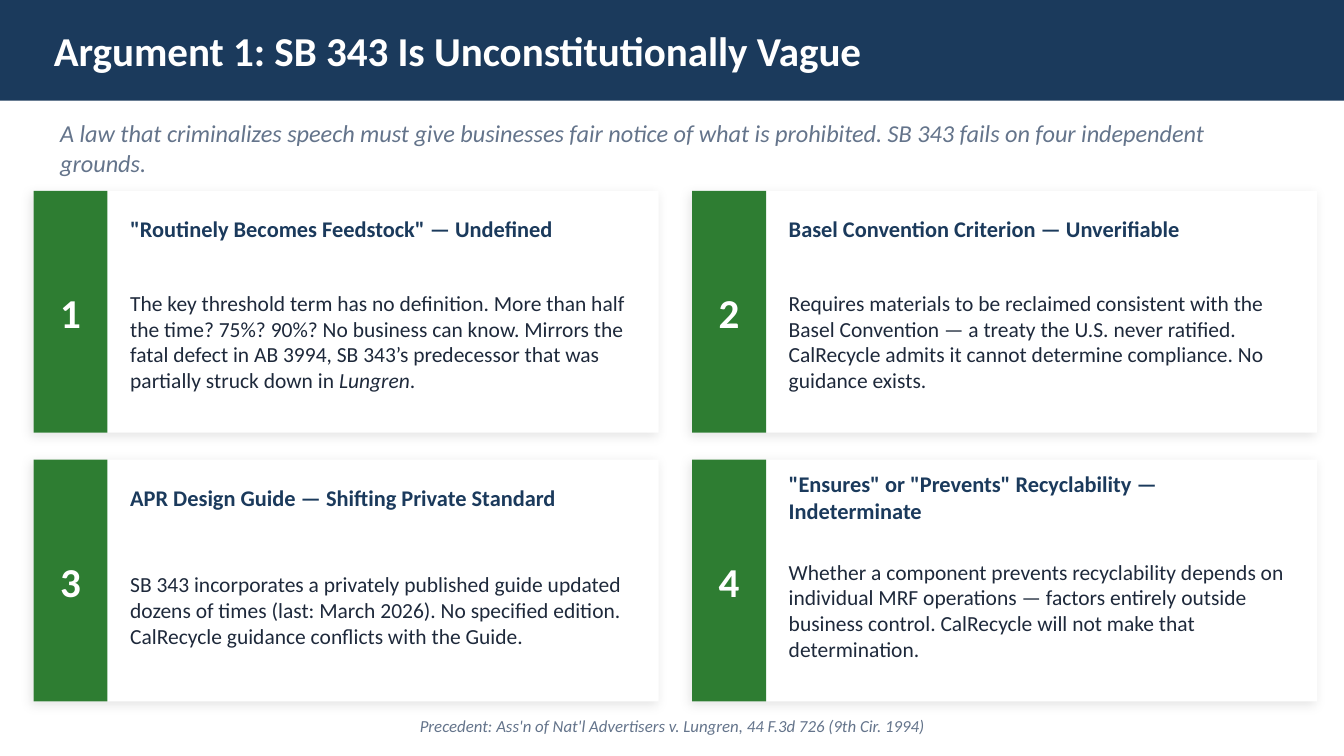
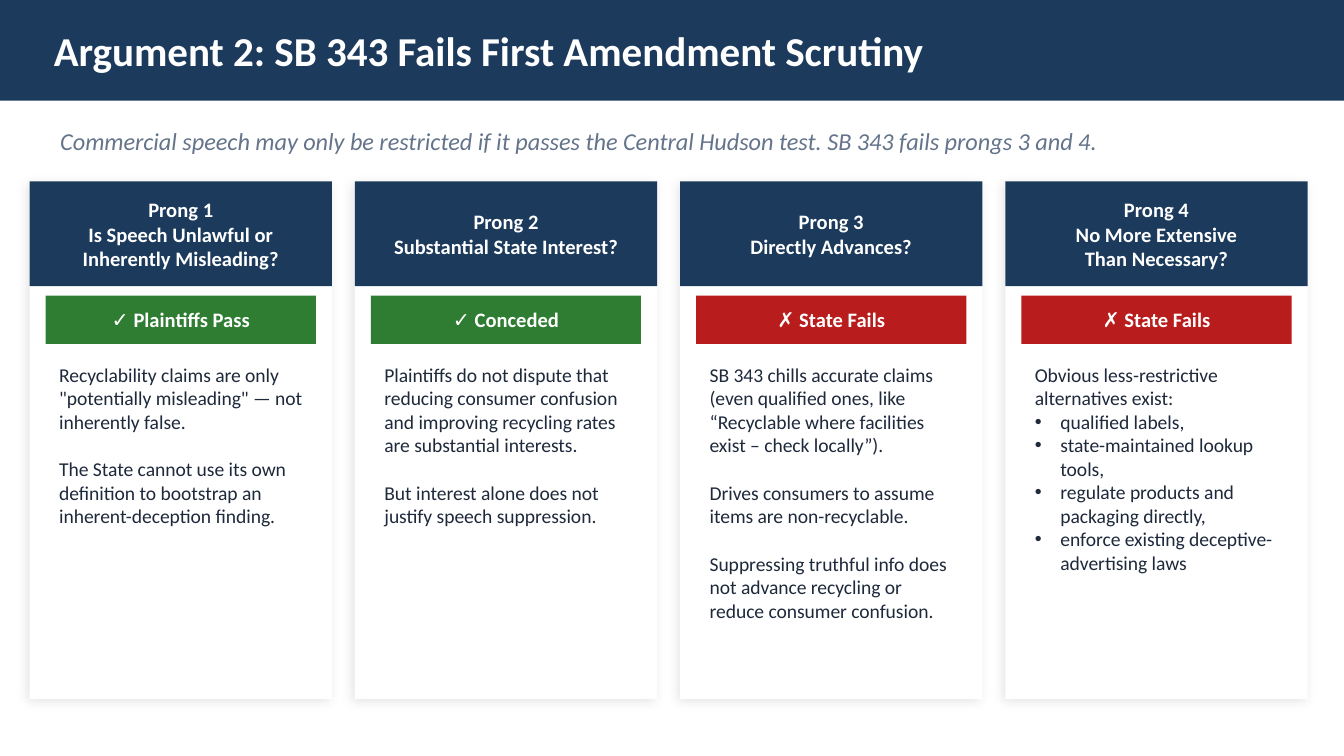
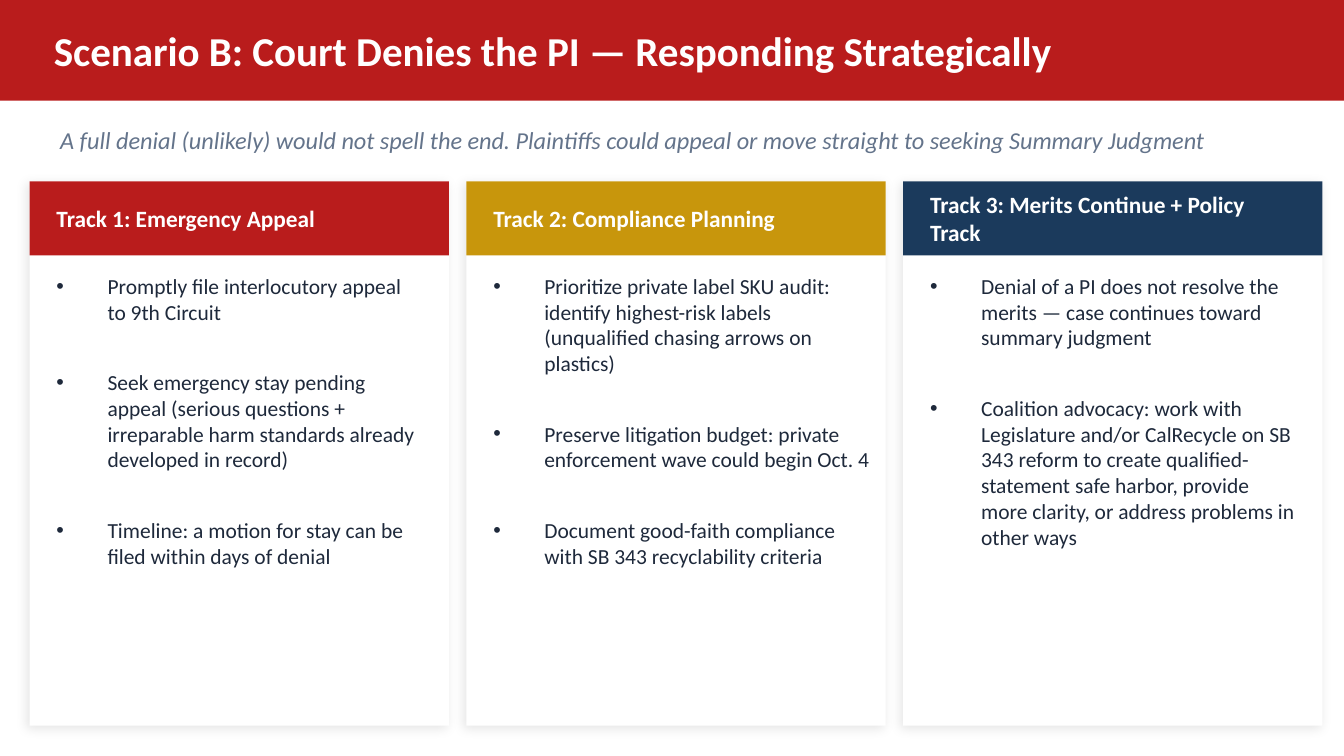
from lxml import etree
from pptx import Presentation
from pptx import util as u
from pptx.dml.color import RGBColor
from pptx.enum import shapes, text
from pptx.oxml.ns import qn

PX = 9144
WIDTH = 1000
FONT = "Calibri"
TITLE_ONLY, COMPARISON = 5, 4

NAVY = RGBColor(0x1B, 0x3A, 0x5C)
GREEN = RGBColor(0x2E, 0x7D, 0x32)
RED = RGBColor(0xB9, 0x1C, 0x1C)
GOLD = RGBColor(0xC8, 0x96, 0x0C)
SLATE = RGBColor(0x64, 0x74, 0x8B)
INK = RGBColor(0x1E, 0x29, 0x3B)
WHITE = RGBColor(0xFF, 0xFF, 0xFF)


def style(size, color, bold=False, italic=False):
    """Return a colour with the font values that go with it."""
    return color, {"name": FONT, "size": u.Pt(size), "bold": bold, "italic": italic}


TITLE = style(22, WHITE, bold=True)
LEAD = style(13, SLATE, italic=True)
NOTE = style(9, SLATE, italic=True)
CARD_HEAD = style(12, NAVY, bold=True)
CARD_TEXT = style(11.5, INK)
PRONG_HEAD = style(11, WHITE, bold=True)
PRONG_TEXT = style(10.5, INK)
TRACK_HEAD = style(12.5, WHITE, bold=True)

LEFT, CENTER = text.PP_ALIGN.LEFT, text.PP_ALIGN.CENTER
TOP, MIDDLE = text.MSO_ANCHOR.TOP, text.MSO_ANCHOR.MIDDLE

GROUNDS = [
    ('"Routinely Becomes Feedstock" — Undefined',
     "The key threshold term has no definition. More than half the time? 75%? 90%? "
     "No business can know. Mirrors the fatal defect in AB 3994, SB 343’s predecessor "
     "that was partially struck down in *Lungren*."),
    ("Basel Convention Criterion — Unverifiable",
     "Requires materials to be reclaimed consistent with the Basel Convention — a treaty "
     "the U.S. never ratified. CalRecycle admits it cannot determine compliance. "
     "No guidance exists."),
    ("APR Design Guide — Shifting Private Standard",
     "SB 343 incorporates a privately published guide updated dozens of times "
     "(last: March 2026). No specified edition. CalRecycle guidance conflicts with the Guide."),
    ('"Ensures" or "Prevents" Recyclability — Indeterminate',
     "Whether a component prevents recyclability depends on individual MRF operations — "
     "factors entirely outside business control. CalRecycle will not make that determination."),
]

PRONGS = [
    (["Prong 1", "Is Speech Unlawful or Inherently Misleading?"], "✓ Plaintiffs Pass", GREEN,
     ['Recyclability claims are only "potentially misleading" — not inherently false.',
      "The State cannot use its own definition to bootstrap an inherent-deception finding."],
     {"gap": 12.8}),
    (["Prong 2", "Substantial State Interest?"], "✓ Conceded", GREEN,
     ["Plaintiffs do not dispute that reducing consumer confusion and improving recycling "
      "rates are substantial interests.",
      "But interest alone does not justify speech suppression."],
     {"gap": 12.8}),
    (["Prong 3", "Directly Advances?"], "✗ State Fails", RED,
     ["SB 343 chills accurate claims (even qualified ones, like “Recyclable where facilities "
      "exist – check locally”).",
      "Drives consumers to assume items are non-recyclable.",
      "Suppressing truthful info does not advance recycling or reduce consumer confusion."],
     {"gap": 12.8}),
    (["Prong 4", "No More Extensive", "Than Necessary?"], "✗ State Fails", RED,
     ["Obvious less-restrictive alternatives exist:",
      "qualified labels,",
      "state-maintained lookup tools,",
      "regulate products and packaging directly,",
      "enforce existing deceptive-advertising laws"],
     {"hang": 19, "first_bullet": 1}),
]

TRACKS = [
    ("Track 1: Emergency Appeal", RED, 292,
     ["Promptly file interlocutory appeal to 9th Circuit",
      "Seek emergency stay pending appeal (serious questions + irreparable harm standards "
      "already developed in record)",
      "Timeline: a motion for stay can be filed within days of denial"]),
    ("Track 2: Compliance Planning", GOLD, 302,
     ["Prioritize private label SKU audit: identify highest-risk labels (unqualified chasing "
      "arrows on plastics)",
      "Preserve litigation budget: private enforcement wave could begin Oct. 4",
      "Document good-faith compliance with SB 343 recyclability criteria"]),
    ("Track 3: Merits Continue + Policy Track", NAVY, 292,
     ["Denial of a PI does not resolve the merits — case continues toward summary judgment",
      "Coalition advocacy: work with Legislature and/or CalRecycle on SB 343 reform to create "
      "qualified-statement safe harbor, provide more clarity, or address problems in other ways"]),
]


def emu(*lengths):
    """Turn px lengths into EMU."""
    return [u.Emu(length * PX) for length in lengths]


def set_bullet(paragraph, hang):
    """Give a paragraph a hanging bullet, or none when hang is 0."""
    props = paragraph._p.get_or_add_pPr()
    props.set("marL", str(hang * PX))
    props.set("indent", str(-hang * PX))
    if hang:
        etree.SubElement(props, qn("a:buFont")).set("typeface", "Arial")
        etree.SubElement(props, qn("a:buChar")).set("char", "•")
    else:
        etree.SubElement(props, qn("a:buNone"))


def write(frame, lines, look, align=LEFT, anchor=MIDDLE, margin=10, gap=0, hang=0,
          first_bullet=0):
    """Fill a text frame with paragraphs; words between asterisks turn italic."""
    color, font_values = look
    side = u.Emu(margin * PX)
    frame_values = {"word_wrap": True, "auto_size": text.MSO_AUTO_SIZE.NONE,
                    "vertical_anchor": anchor, "margin_left": side, "margin_right": side}
    for name, value in frame_values.items():
        setattr(frame, name, value)
    for index, line in enumerate(lines):
        paragraph = frame.add_paragraph() if index else frame.paragraphs[0]
        paragraph.alignment = align
        paragraph.space_before = u.Pt(gap if index else 0)
        set_bullet(paragraph, hang if index >= first_bullet else 0)
        for part, words in enumerate(line.split("*")):
            run = paragraph.add_run()
            run.text = words
            for name, value in font_values.items():
                setattr(run.font, name, value)
            run.font.color.rgb = color
            if part % 2:
                run.font.italic = True


def add_text(slide, box, lines, look, **layout):
    """Add a text box."""
    write(slide.shapes.add_textbox(*emu(*box)).text_frame, lines, look, **layout)


def fill_placeholder(holder, box, lines, look, **layout):
    """Move a placeholder to a box, bring it to the front and fill it."""
    for name, length in zip(("left", "top", "width", "height"), emu(*box)):
        setattr(holder, name, length)
    holder.element.getparent().append(holder.element)
    write(holder.text_frame, lines, look, **layout)


def add_block(slide, box, color):
    """Add a plain rectangle without outline or shadow."""
    block = slide.shapes.add_shape(shapes.MSO_SHAPE.RECTANGLE, *emu(*box))
    block.shadow.inherit = False
    block.fill.solid()
    block.fill.fore_color.rgb = color
    block.line.fill.background()
    return block


def add_panel(slide, box):
    """Add a white panel with a soft shadow."""
    effects = add_block(slide, box, WHITE).element.spPr.find(qn("a:effectLst"))
    shadow = etree.SubElement(effects, qn("a:outerShdw"), blurRad=str(u.Pt(6)),
                              dist=str(u.Pt(2)), dir=str(135 * 60000), algn="bl",
                              rotWithShape="0")
    tint = etree.SubElement(shadow, qn("a:srgbClr"), val="000000")
    etree.SubElement(tint, qn("a:alpha"), val="10000")


def start_slide(deck, layout, title, lead, lead_height, band=NAVY):
    """Add a slide with its title band and lead sentence."""
    slide = deck.slides.add_slide(deck.slide_layouts[layout])
    add_block(slide, (0, 0, WIDTH, 75), band)
    fill_placeholder(slide.shapes.title, (30, 0, 940, 75), [title], TITLE)
    add_text(slide, (35, 85, 930, lead_height), [lead], LEAD)
    return slide


def bodies(slide):
    """List the body placeholders in layout order."""
    return [holder for holder in slide.placeholders if holder.placeholder_format.idx]


def ground_card(slide, box, number, heading, reason):
    """Draw one numbered ground."""
    left, top, width, height = box
    add_panel(slide, box)
    tab = add_block(slide, (left, top, 55, height), GREEN)
    write(tab.text_frame, [str(number)], TITLE, align=CENTER)
    add_text(slide, (left + 62, top + 8, width - 70, 40), [heading], CARD_HEAD)
    add_text(slide, (left + 62, top + 52, width - 70, 120), [reason], CARD_TEXT)


def prong_column(slide, box, holder, prong):
    """Draw one prong with its verdict and reasons."""
    left, top, width, height = box
    heading, verdict, color, reasons, layout = prong
    add_panel(slide, box)
    header = add_block(slide, (left, top, width, 78), NAVY)
    write(header.text_frame, heading, PRONG_HEAD, align=CENTER, margin=18)
    badge = add_block(slide, (left + 12, top + 85, width - 24, 36), color)
    write(badge.text_frame, [verdict], PRONG_HEAD, align=CENTER)
    fill_placeholder(holder, (left + 12, top + 130, width - 23, height - 140), reasons,
                     PRONG_TEXT, anchor=TOP, **layout)


def track_column(slide, box, holder, track):
    """Draw one track with its list of steps."""
    left, top, width, height = box
    heading, color, list_width, steps = track
    add_panel(slide, box)
    header = add_block(slide, (left, top, width, 55), color)
    write(header.text_frame, [heading], TRACK_HEAD, margin=20)
    fill_placeholder(holder, (left + 10, top + 63, list_width, height - 75), steps,
                     CARD_TEXT, anchor=TOP, gap=24, hang=38)


def vagueness_slide(deck):
    """Build the slide with four grounds in a grid."""
    slide = start_slide(deck, TITLE_ONLY, "Argument 1: SB 343 Is Unconstitutionally Vague",
                        "A law that criminalizes speech must give businesses fair notice of what "
                        "is prohibited. SB 343 fails on four independent grounds.", 50)
    for index, (heading, reason) in enumerate(GROUNDS):
        row, column = divmod(index, 2)
        ground_card(slide, (25 + 490 * column, 142 + 200 * row, 465, 180), index + 1,
                    heading, reason)
    add_text(slide, (30, 525, 940, 30),
             ["Precedent: Ass'n of Nat'l Advertisers v. Lungren, 44 F.3d 726 (9th Cir. 1994)"],
             NOTE, align=CENTER)


def scrutiny_slide(deck):
    """Build the slide with the four prongs."""
    slide = start_slide(deck, COMPARISON, "Argument 2: SB 343 Fails First Amendment Scrutiny",
                        "Commercial speech may only be restricted if it passes the Central Hudson "
                        "test. SB 343 fails prongs 3 and 4.", 40)
    for index, (holder, prong) in enumerate(zip(bodies(slide), PRONGS)):
        prong_column(slide, (22 + 242 * index, 135, 225, 385), holder, prong)


def denial_slide(deck):
    """Build the slide with the three tracks."""
    slide = start_slide(deck, COMPARISON,
                        "Scenario B: Court Denies the PI — Responding Strategically",
                        "A full denial (unlikely) would not spell the end. Plaintiffs could appeal "
                        "or move straight to seeking Summary Judgment", 38, band=RED)
    *holders, spare = bodies(slide)
    spare.element.getparent().remove(spare.element)
    for index, (holder, track) in enumerate(zip(holders, TRACKS)):
        track_column(slide, (22 + 325 * index, 135, 312, 405), holder, track)


def main():
    """Build and save the deck."""
    deck = Presentation()
    deck.slide_width = u.Emu(WIDTH * PX)
    deck.slide_height = u.Emu(deck.slide_width * 9 // 16)
    vagueness_slide(deck)
    scrutiny_slide(deck)
    denial_slide(deck)
    deck.save("out.pptx")


if __name__ == "__main__":
    main()
